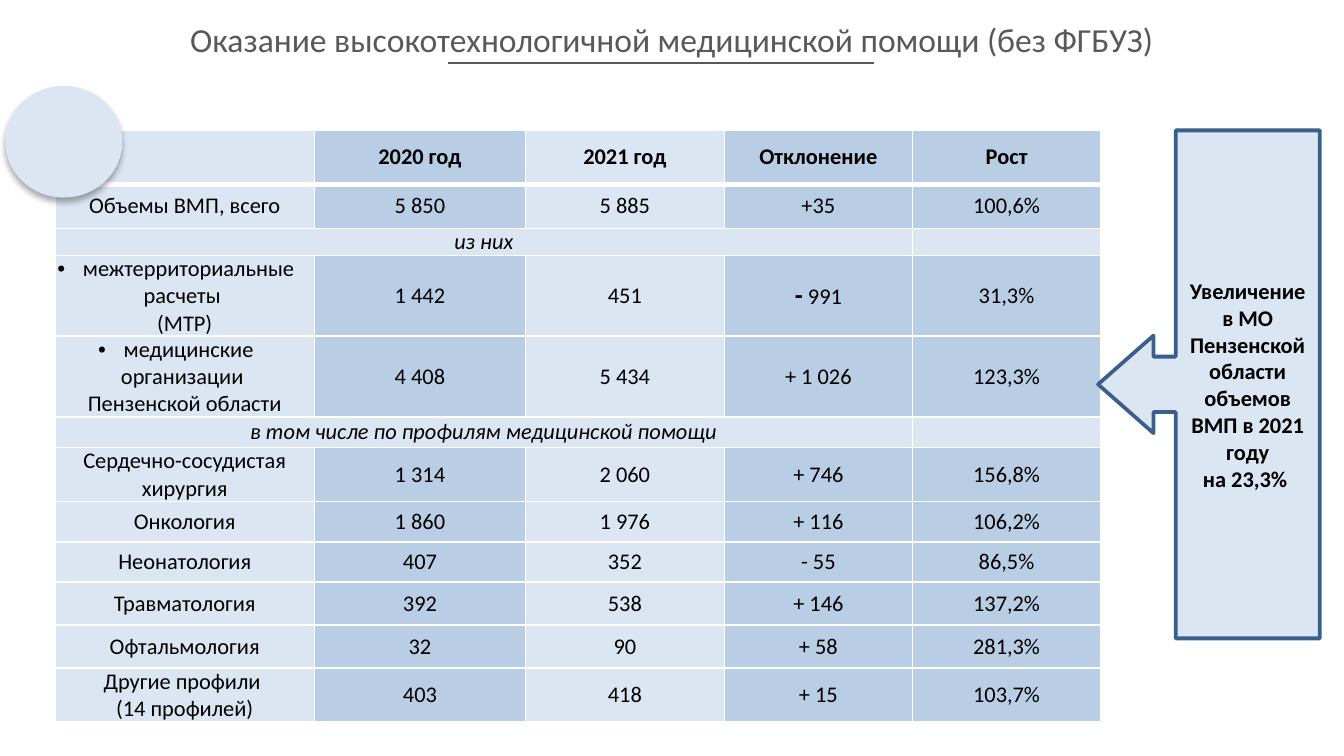
"""Builds the slide on high-technology medical care volumes."""
from dataclasses import dataclass

from lxml.etree import SubElement
from pptx import Presentation
from pptx.dml.color import RGBColor
from pptx.enum.shapes import MSO_CONNECTOR, MSO_SHAPE
from pptx.enum.text import MSO_ANCHOR, PP_ALIGN
from pptx.oxml.ns import qn
from pptx.util import Inches, Pt

FONT = "Calibri"
PALE = RGBColor(0xDC, 0xE6, 0xF2)
BLUE = RGBColor(0xB9, 0xCD, 0xE5)
OUTLINE = RGBColor(0x3A, 0x5F, 0x8C)
GRAY = RGBColor(0x59, 0x59, 0x59)
BLACK = RGBColor(0, 0, 0)
SLIDE_WIDTH = Inches(10)
SLIDE_HEIGHT = SLIDE_WIDTH * 9 // 16
COLUMN_WIDTHS = (1.93, 1.57, 1.48, 1.4, 1.4)
COLUMN_FILLS = (PALE, BLUE, PALE, BLUE, BLUE)
TABLE_HEIGHT = Inches(4.39)
HANGING = Inches(0.19)


@dataclass(frozen=True)
class Row:
    height: float
    texts: tuple[str, ...]
    bold: bool = False
    band: bool = False
    bulleted: bool = False
    hanging: int = 0


ROWS = (
    Row(0.4, ("", "2020 год", "2021 год", "Отклонение", "Рост"), bold=True),
    Row(0.33, ("Объемы ВМП, всего", "5 850", "5 885", "+35", "100,6%")),
    Row(0.2, ("из них", "", "", "", ""), band=True),
    Row(0.37, ("межтерриториальные расчеты \n(МТР)", "1 442", "451", "- 991", "31,3%"),
        bulleted=True, hanging=1),
    Row(0.34, ("медицинские организации \nПензенской области", "4 408", "5 434", "+ 1 026", "123,3%"),
        bulleted=True, hanging=2),
    Row(0.23, ("в том числе по профилям медицинской помощи", "", "", "", ""), band=True),
    Row(0.31, ("Сердечно-сосудистая хирургия", "1 314", "2 060", "+ 746", "156,8%")),
    Row(0.3, ("Онкология", "1 860", "1 976", "+ 116", "106,2%")),
    Row(0.3, ("Неонатология", "407", "352", "- 55", "86,5%")),
    Row(0.32, ("Травматология", "392", "538", "+ 146", "137,2%")),
    Row(0.32, ("Офтальмология", "32", "90", "+ 58", "281,3%")),
    Row(0.39, ("Другие профили \n(14 профилей)", "403", "418", "+ 15", "103,7%")),
)


def write_text(frame, text: str, *, size: float = 12, color: RGBColor = BLACK,
               bold: bool = False, italic: bool = False,
               bulleted: bool = False, hanging: int = 0) -> None:
    frame.word_wrap = True
    for index, line in enumerate(text.split("\n")):
        paragraph = frame.paragraphs[0] if index == 0 else frame.add_paragraph()
        paragraph.alignment = PP_ALIGN.CENTER
        if index < hanging:
            properties = paragraph._p.get_or_add_pPr()
            properties.set("marL", "0")
            properties.set("indent", str(-HANGING))
            if bulleted and index == 0:
                SubElement(properties, qn("a:buFont"), typeface="Arial")
                SubElement(properties, qn("a:buChar"), char="•")
        if not line:
            SubElement(paragraph._p, qn("a:endParaRPr"), sz=str(int(size * 100)))
            continue
        run = paragraph.add_run()
        run.text = line
        run.font.name, run.font.size = FONT, Pt(size)
        run.font.bold, run.font.italic = bold, italic
        run.font.color.rgb = color


def set_borders(cell, **widths: float) -> None:
    properties = cell._tc.get_or_add_tcPr()
    for position, side in enumerate(("L", "R", "T", "B")):
        border = properties.makeelement(qn(f"a:ln{side}"), {"w": str(Pt(widths.get(side, 1)))})
        fill = SubElement(border, qn("a:solidFill"))
        SubElement(fill, qn("a:srgbClr"), val="FFFFFF")
        properties.insert(position, border)


def emphasize_minus(paragraph) -> None:
    minus = paragraph.runs[0]
    number = paragraph.add_run()
    number.text, minus.text = minus.text[1:], minus.text[:1]
    number.font.name, number.font.size, number.font.bold = FONT, Pt(12), False
    number.font.color.rgb = BLACK
    minus.font.size, minus.font.bold = Pt(14), True


def add_volumes(slide) -> None:
    volumes = slide.shapes.add_table(
        len(ROWS), len(COLUMN_WIDTHS), Inches(0.41), Inches(0.97),
        Inches(sum(COLUMN_WIDTHS)), TABLE_HEIGHT)
    table = volumes.table
    table.first_row = table.horz_banding = False
    for column, width in zip(table.columns, COLUMN_WIDTHS):
        column.width = Inches(width)
    for r, row in enumerate(ROWS):
        table.rows[r].height = Inches(row.height)
        for c, text in enumerate(row.texts):
            cell = table.cell(r, c)
            cell.margin_left = cell.margin_right = cell.margin_top = cell.margin_bottom = 0
            cell.vertical_anchor = MSO_ANCHOR.MIDDLE
            cell.fill.solid()
            cell.fill.fore_color.rgb = PALE if row.band else COLUMN_FILLS[c]
            set_borders(cell, B=3 if r == 0 else 1, T=3 if r == 1 else 1)
            write_text(cell.text_frame, text, bold=row.bold, italic=row.band,
                       bulleted=row.bulleted, hanging=row.hanging if c == 0 else 0)
        if row.band:
            table.cell(r, 0).merge(table.cell(r, 3))
    emphasize_minus(table.cell(3, 3).text_frame.paragraphs[0])
    volumes.height = TABLE_HEIGHT


def add_pale_shape(slide, kind: MSO_SHAPE, left: float, top: float, width: float, height: float):
    shape = slide.shapes.add_shape(kind, Inches(left), Inches(top), Inches(width), Inches(height))
    shape.shadow.inherit = False
    shape.fill.solid()
    shape.fill.fore_color.rgb = PALE
    return shape


def add_title(slide) -> None:
    title = slide.shapes.add_textbox(Inches(0.16), Inches(-0.03), Inches(9.68), Inches(0.64))
    title.text_frame.vertical_anchor = MSO_ANCHOR.MIDDLE
    write_text(title.text_frame, "Оказание высокотехнологичной медицинской помощи (без ФГБУЗ)",
               size=18, color=GRAY)
    underline = slide.shapes.add_connector(
        MSO_CONNECTOR.STRAIGHT, Inches(3.33), Inches(0.47), Inches(6.5), Inches(0.47))
    underline.line.color.rgb = GRAY
    underline.line.width = Pt(1)
    SubElement(underline._element.spPr, qn("a:effectLst"))


def add_growth_callout(slide) -> None:
    callout = add_pale_shape(slide, MSO_SHAPE.LEFT_ARROW_CALLOUT, 8.17, 0.97, 1.65, 3.78)
    for index, value in enumerate((0.25, 0.22, 0.25, 0.65)):
        callout.adjustments[index] = value
    callout.line.color.rgb = OUTLINE
    callout.line.width = Pt(2)
    callout.text_frame.vertical_anchor = MSO_ANCHOR.MIDDLE
    write_text(callout.text_frame,
               "Увеличение в МО Пензенской области объемов ВМП в 2021 году\nна 23,3% ", bold=True)


def add_badge(slide) -> None:
    badge = add_pale_shape(slide, MSO_SHAPE.OVAL, 0.04, 0.64, 0.87, 0.83)
    badge.line.fill.background()
    effects = badge._element.spPr.find(qn("a:effectLst"))
    shadow = SubElement(effects, qn("a:outerShdw"), blurRad=str(Pt(3.5)), dist=str(Pt(2.2)),
                        dir="5400000", rotWithShape="0")
    tint = SubElement(shadow, qn("a:srgbClr"), val="000000")
    SubElement(tint, qn("a:alpha"), val="32000")


def main() -> None:
    presentation = Presentation()
    presentation.slide_width, presentation.slide_height = SLIDE_WIDTH, SLIDE_HEIGHT
    slide = presentation.slides.add_slide(presentation.slide_layouts[6])
    add_title(slide)
    add_volumes(slide)
    add_growth_callout(slide)
    add_badge(slide)
    presentation.save("out.pptx")


if __name__ == "__main__":
    main()
